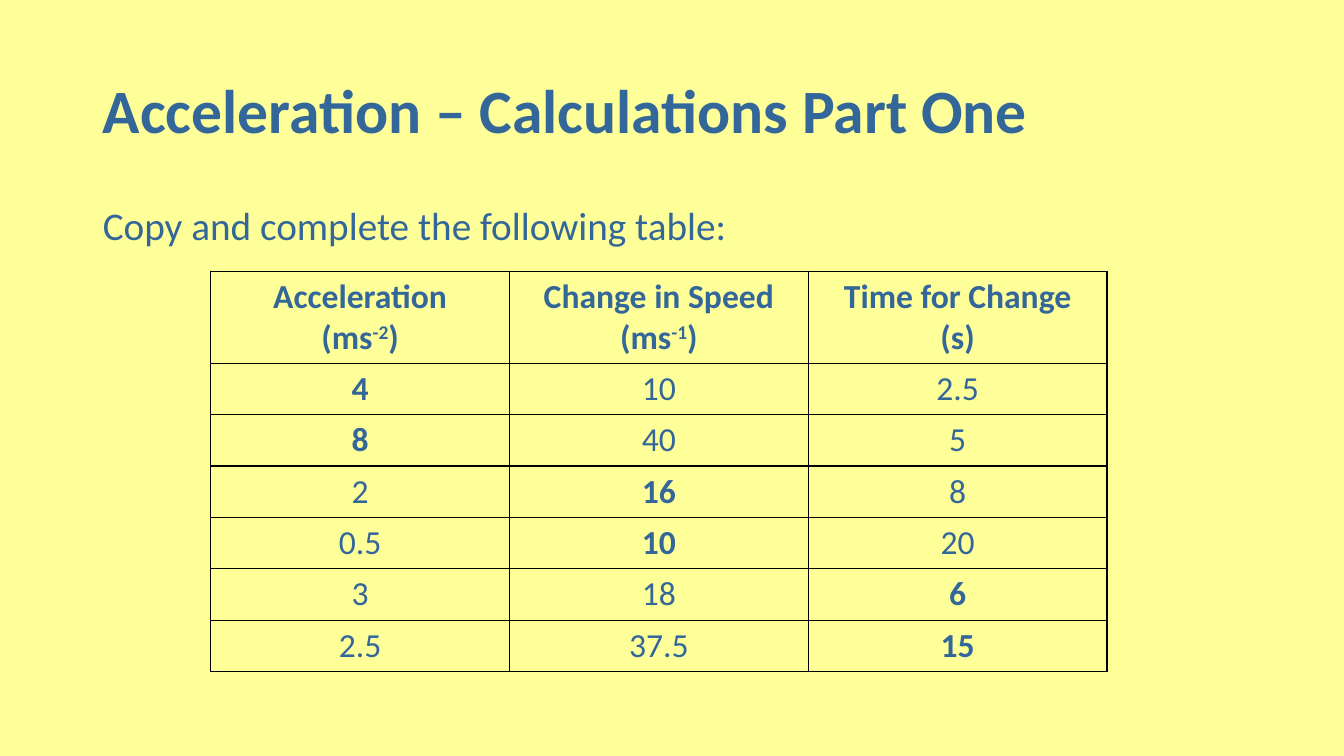
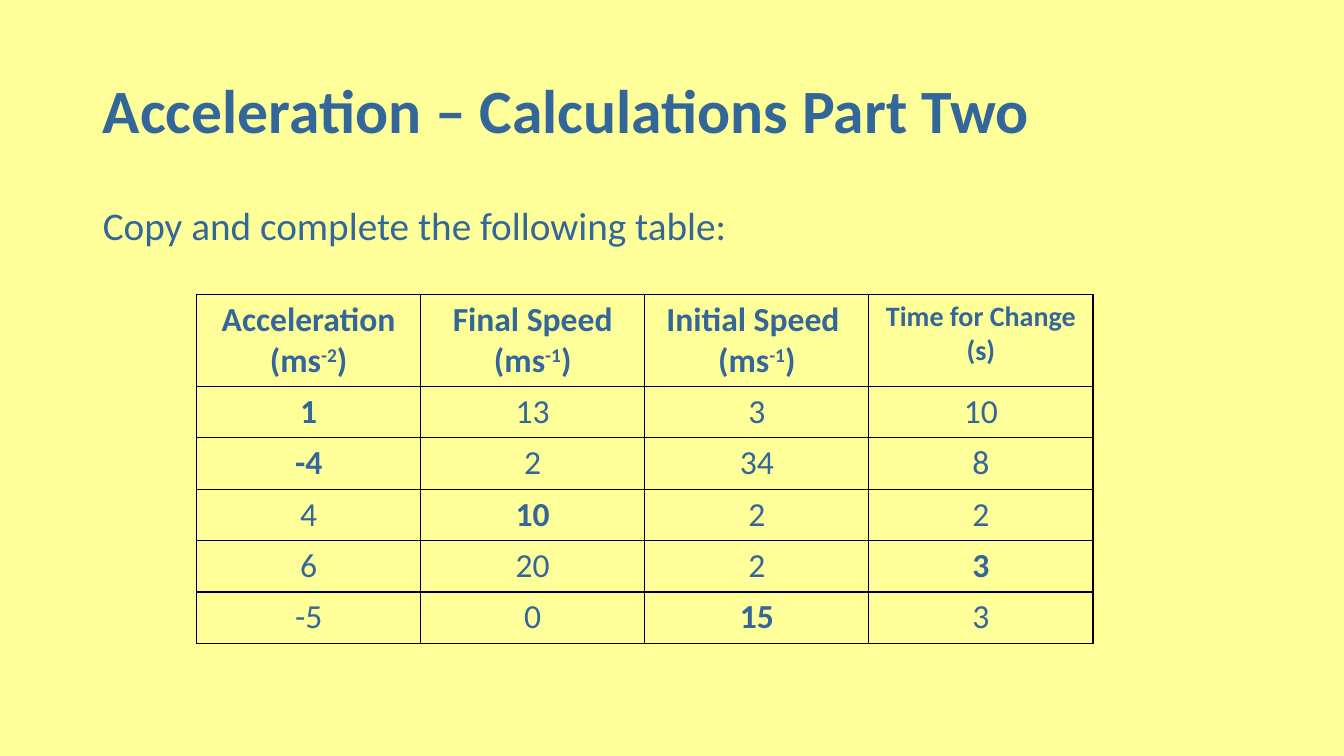
from lxml import etree
from pptx import Presentation
from pptx.dml.color import RGBColor
from pptx.enum.text import MSO_ANCHOR, PP_ALIGN
from pptx.oxml.ns import qn
from pptx.util import Inches, Pt

LEFT, CENTER = PP_ALIGN.LEFT, PP_ALIGN.CENTER
MIDDLE, TOP = MSO_ANCHOR.MIDDLE, MSO_ANCHOR.TOP
COLORS = {"background": "FFFF99", "text": "336699", "border": "000000"}
FONT = "Calibri"
TITLE_AND_CONTENT = 1
TABLE_WIDTH, HEADER_HEIGHT, ROW_HEIGHT = 8.89, 0.91, 0.51

# Lines of a header are parted by \n; ^ opens and closes a superscript.
# A leading * marks an answer, set in bold.
TABLES = [
    {
        "title": "Acceleration – Calculations Part One",
        "left": 2.09, "top": 2.69,
        "headers": ["Acceleration\n(ms^-2^)", "Change in Speed\n(ms^-1^)",
                    "Time for Change\n(s)"],
        "sizes": [24, 24, 24],
        "rows": [
            ["*4", "10", "2.5"],
            ["*8", "40", "5"],
            ["2", "*16", "8"],
            ["0.5", "*10", "20"],
            ["3", "18", "*6"],
            ["2.5", "37.5", "*15"],
        ],
    },
    {
        "title": "Acceleration – Calculations Part Two",
        "left": 1.95, "top": 2.92,
        "headers": ["Acceleration\n(ms^-2^)", "Final Speed\n(ms^-1^)",
                    "Initial Speed \n(ms^-1^)", "Time for Change\n(s)"],
        "sizes": [24, 24, 24, 20],
        "rows": [
            ["*1", "13", "3", "10"],
            ["*-4", "2", "34", "8"],
            ["4", "*10", "2", "2"],
            ["6", "20", "2", "*3"],
            ["-5", "0", "*15", "3"],
        ],
    },
]


def write_text(frame, text, size=24, bold=False, align=LEFT,
               line_spacing=None, space_before=None):
    """Fill a text frame, one paragraph for each line of the text."""
    for index, line in enumerate(text.split("\n")):
        paragraph = frame.add_paragraph() if index else frame.paragraphs[0]
        paragraph.alignment = align
        if line_spacing is not None:
            paragraph.line_spacing = line_spacing
        if space_before is not None:
            paragraph.space_before = Pt(space_before)
        for position, piece in enumerate(line.split("^")):
            run = paragraph.add_run()
            run.text = piece
            run.font.name = FONT
            run.font.size = Pt(size)
            run.font.bold = bold
            run.font.color.rgb = RGBColor.from_string(COLORS["text"])
            if position % 2:
                run.font._element.set("baseline", "30000")


def draw_borders(cell):
    properties = cell._tc.get_or_add_tcPr()
    for side in ("a:lnL", "a:lnR", "a:lnT", "a:lnB"):
        line = etree.SubElement(properties, qn(side), w=str(Pt(1)))
        fill = etree.SubElement(line, qn("a:solidFill"))
        etree.SubElement(fill, qn("a:srgbClr"), val=COLORS["border"])


class Deck:
    def __init__(self):
        self.presentation = Presentation()
        self.presentation.slide_width = Inches(13.33)
        self.presentation.slide_height = Inches(7.5)
        fill = self.presentation.slide_master.background.fill
        fill.solid()
        fill.fore_color.rgb = RGBColor.from_string(COLORS["background"])
        self.slide = None

    def add_slide(self):
        layout = self.presentation.slide_layouts[TITLE_AND_CONTENT]
        self.slide = self.presentation.slides.add_slide(layout)

    def place(self, shape, top, height, anchor):
        shape.left, shape.top = Inches(0.92), Inches(top)
        shape.width, shape.height = Inches(11.5), Inches(height)
        shape.text_frame.vertical_anchor = anchor
        return shape.text_frame

    def title(self, text):
        frame = self.place(self.slide.shapes.title, 0.4, 1.45, MIDDLE)
        write_text(frame, text, size=44, bold=True, line_spacing=0.9)

    def body(self, text):
        frame = self.place(self.slide.placeholders[1], 2, 4.76, TOP)
        write_text(frame, text, size=28, line_spacing=0.9, space_before=10)
        # Plain text without bullet or indent
        for paragraph in frame.paragraphs:
            properties = paragraph._p.get_or_add_pPr()
            properties.set("marL", "0")
            properties.set("indent", "0")
            etree.SubElement(properties, qn("a:buNone"))

    def table(self, left, top, headers, sizes, rows):
        height = HEADER_HEIGHT + ROW_HEIGHT * len(rows)
        table = self.slide.shapes.add_table(
            len(rows) + 1, len(headers), Inches(left), Inches(top),
            Inches(TABLE_WIDTH), Inches(height)).table
        table.first_row = table.horz_banding = False
        for column in table.columns:
            column.width = Inches(TABLE_WIDTH / len(headers))
        for row_index, texts in enumerate([headers] + rows):
            is_header = row_index == 0
            table.rows[row_index].height = Inches(
                HEADER_HEIGHT if is_header else ROW_HEIGHT)
            for column_index, text in enumerate(texts):
                cell = table.cell(row_index, column_index)
                draw_borders(cell)
                cell.fill.background()
                write_text(cell.text_frame, text.lstrip("*"), align=CENTER,
                           size=sizes[column_index] if is_header else 24,
                           bold=is_header or text.startswith("*"))


def main():
    deck = Deck()
    for content in TABLES:
        deck.add_slide()
        deck.title(content["title"])
        deck.body("Copy and complete the following table:")
        deck.table(content["left"], content["top"], content["headers"],
                   content["sizes"], content["rows"])
    deck.presentation.save("out.pptx")


if __name__ == "__main__":
    main()
